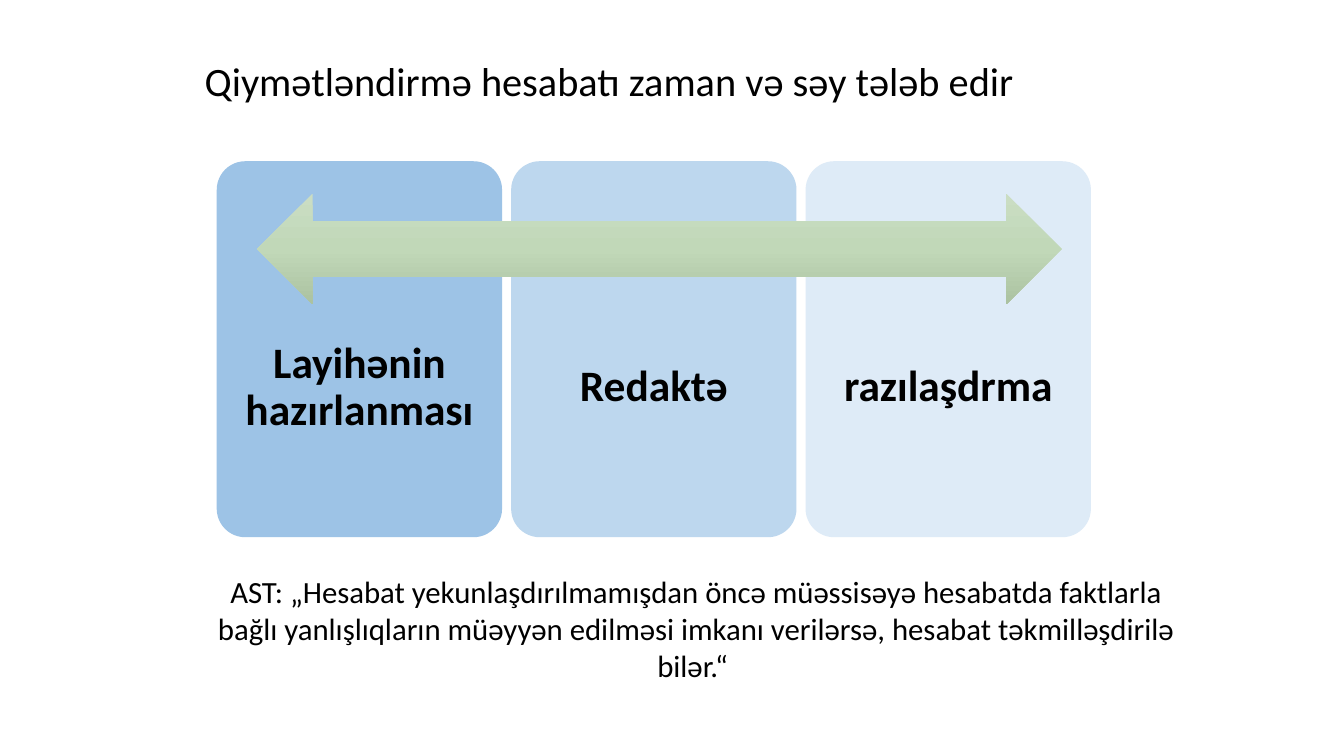
"""Build the slide on the stages of an evaluation report."""
from copy import deepcopy

from pptx import Presentation
from pptx.dml.color import RGBColor
from pptx.enum.shapes import MSO_SHAPE
from pptx.enum.text import MSO_ANCHOR, MSO_AUTO_SIZE, PP_ALIGN
from pptx.oxml.ns import qn
from pptx.util import Inches, Pt

BLACK = RGBColor(0x00, 0x00, 0x00)
BLUE = RGBColor(0x9D, 0xC3, 0xE6)
LIGHT_BLUE = RGBColor(0xBD, 0xD7, 0xEE)
PALE_BLUE = RGBColor(0xDE, 0xEB, 0xF7)
GREEN_STOPS = [
    (0, RGBColor(0xCA, 0xDD, 0xC3)),
    (0.5, RGBColor(0xC1, 0xD8, 0xB8)),
    (1, RGBColor(0xAB, 0xC2, 0xA1)),
]
STAGES = [
    ("Layihənin hazırlanması", BLUE),
    ("Redaktə", LIGHT_BLUE),
    ("razılaşdrma", PALE_BLUE),
]
STAGE_LEFT, STAGE_STEP, STAGE_WIDTH = 2.15, 2.92, 2.83


class SlideBuilder:
    """Hold the style and the current slide."""

    font = "Calibri"
    color = BLACK

    def __init__(self, prs):
        self.slide = prs.slides.add_slide(prs.slide_layouts[5])

    def set_text(self, sp, text, size, align, anchor, inset=None, bold=False, spacing=None):
        tf = sp.text_frame
        tf.text = text
        tf.word_wrap = True
        tf.auto_size = MSO_AUTO_SIZE.NONE
        tf.vertical_anchor = anchor
        if inset is not None:
            tf.margin_left = tf.margin_right = Inches(inset)
            tf.margin_top = tf.margin_bottom = Inches(inset)
        p = tf.paragraphs[0]
        p.alignment = align
        p.line_spacing = spacing
        r = p.runs[0]
        r.font.name = self.font
        r.font.size = Pt(size)
        r.font.bold = bold
        r.font.color.rgb = self.color

    def title(self, text, left, top, width, height, size):
        sp = self.slide.shapes.title
        sp.left, sp.top = Inches(left), Inches(top)
        sp.width, sp.height = Inches(width), Inches(height)
        self.set_text(sp, text, size, PP_ALIGN.LEFT, MSO_ANCHOR.MIDDLE, spacing=0.9)

    def text(self, text, left, top, width, height, size, anchor=MSO_ANCHOR.TOP, **style):
        sp = self.slide.shapes.add_textbox(
            Inches(left), Inches(top), Inches(width), Inches(height))
        self.set_text(sp, text, size, PP_ALIGN.CENTER, anchor, **style)

    def shape(self, kind, left, top, width, height):
        sp = self.slide.shapes.add_shape(
            kind, Inches(left), Inches(top), Inches(width), Inches(height))
        sp.shadow.inherit = False
        sp.line.fill.background()
        return sp

    def card(self, left, top, width, height, color):
        sp = self.shape(MSO_SHAPE.ROUNDED_RECTANGLE, left, top, width, height)
        sp.adjustments[0] = 0.1
        sp.fill.solid()
        sp.fill.fore_color.rgb = color

    def arrow(self, left, top, width, height, stops):
        sp = self.shape(MSO_SHAPE.LEFT_RIGHT_ARROW, left, top, width, height)
        sp.fill.gradient()
        sp.fill.gradient_angle = 270
        gs = sp._element.spPr.find(".//" + qn("a:gs"))
        gs.addnext(deepcopy(gs))
        for stop, (position, color) in zip(sp.fill.gradient_stops, stops):
            stop.position = position
            stop.color.rgb = color


def main():
    prs = Presentation()
    prs.slide_width, prs.slide_height = Inches(13.33), Inches(7.5)
    s = SlideBuilder(prs)
    s.title("Qiymətləndirmə hesabatı zaman və səy tələb edir",
            1.93, 0.36, 9.06, 0.93, 28.8)
    for i, (label, color) in enumerate(STAGES):
        left = STAGE_LEFT + i * STAGE_STEP
        s.card(left, 1.6, STAGE_WIDTH, 3.73, color)
        s.text(label, left, 3.1, STAGE_WIDTH, 1.49, 31, MSO_ANCHOR.MIDDLE,
               inset=0.24, bold=True, spacing=0.9)
    s.arrow(2.55, 1.92, 7.98, 1.1, GREEN_STOPS)
    s.text("AST: „Hesabat yekunlaşdırılmamışdan öncə müəssisəyə hesabatda faktlarla "
           "bağlı yanlışlıqların müəyyən edilməsi imkanı verilərsə, hesabat "
           "təkmilləşdirilə bilər.“ ", 2.15, 5.68, 9.51, 1.11, 22, inset=0)
    prs.save("out.pptx")


if __name__ == "__main__":
    main()
